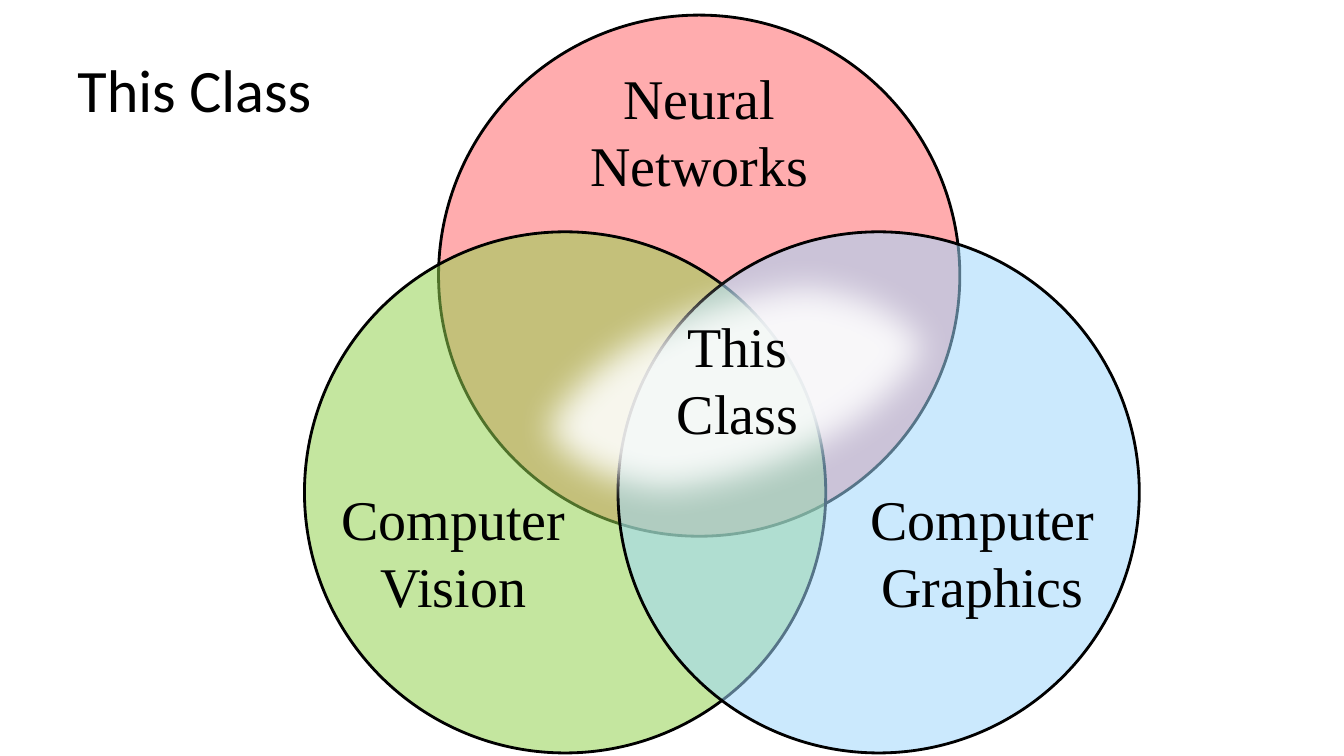
from lxml import etree
from pptx import Presentation
from pptx.dml.color import RGBColor
from pptx.enum.shapes import MSO_SHAPE
from pptx.enum.text import MSO_ANCHOR, PP_ALIGN
from pptx.oxml.ns import qn
from pptx.util import Inches, Pt

OVAL = MSO_SHAPE.OVAL
MIDDLE = MSO_ANCHOR.MIDDLE
CENTER = PP_ALIGN.CENTER
BLACK = RGBColor(0x00, 0x00, 0x00)
WHITE = RGBColor(0xFF, 0xFF, 0xFF)
RED = RGBColor(0xFF, 0x5B, 0x5E)
GREEN = RGBColor(0x93, 0xD1, 0x4F)
BLUE = RGBColor(0xA0, 0xD8, 0xFC)
DIAMETER = 5.17
LABEL_W, LABEL_H = 2.67, 1.45
SOFT_EDGE = Pt(25)


def add_oval(shapes, box, color, opacity):
    """Add a translucent ellipse without shadow in the given box."""
    sp = shapes.add_shape(OVAL, *map(Inches, box))
    sp.shadow.inherit = False
    sp.fill.solid()
    sp.fill.fore_color.rgb = color
    clr = sp.fill._xPr.find(qn("a:solidFill"))[0]
    etree.SubElement(clr, qn("a:alpha")).set("val", str(opacity * 1000))
    return sp


def add_circle(shapes, left, top, color, opacity):
    """Add one outlined circle of the Venn diagram."""
    sp = add_oval(shapes, (left, top, DIAMETER, DIAMETER), color, opacity)
    sp.line.color.rgb = BLACK
    sp.line.width = Pt(2)


def add_run(p, text, font, size):
    """Add a black run to a paragraph."""
    r = p.add_run()
    r.text = text
    r.font.name = font
    r.font.size = Pt(size)
    r.font.color.rgb = BLACK


def add_label(shapes, left, top, first, second):
    """Add a centred label of two lines."""
    tf = shapes.add_textbox(*map(Inches, (left, top, LABEL_W, LABEL_H))).text_frame
    tf.word_wrap = True
    p = tf.paragraphs[0]
    p.alignment = CENTER
    p.line_spacing = Pt(48)
    add_run(p, first, "Times New Roman", 40)
    p.add_line_break()
    add_run(p, second, "Times New Roman", 40)


def add_title(s, box, text):
    """Add the slide title, centred vertically in its box."""
    tf = s.shapes.add_textbox(*map(Inches, box)).text_frame
    tf.word_wrap = True
    tf.vertical_anchor = MIDDLE
    add_run(tf.paragraphs[0], text, "Calibri", 43)


def add_venn(s, left, top):
    """Draw the three overlapping topics, placed from the top left corner."""
    low = top + 2.15
    add_circle(s.shapes, left + 1.33, top, RED, 50)
    add_circle(s.shapes, left, low, GREEN, 54)
    add_circle(s.shapes, left + 3.11, low, BLUE, 54)
    add_label(s.shapes, left + 2.58, top + 0.43, "Neural", "Networks")
    add_label(s.shapes, left + 0.14, low + 2.46, "Computer", "Vision")
    add_label(s.shapes, left + 5.39, low + 2.46, "Computer", "Graphics")


def add_focus(s, left, top):
    """Draw the soft white patch that marks the class, with its label."""
    shapes = s.shapes.add_group_shape().shapes
    sp = add_oval(shapes, (left, top, 4.66, 2.5), WHITE, 87)
    sp.line.fill.background()
    sp.rotation = 345
    effects = sp._element.spPr.find(qn("a:effectLst"))
    etree.SubElement(effects, qn("a:softEdge")).set("rad", str(SOFT_EDGE))
    add_label(shapes, left + 1.02, top + 0.45, "This", "Class")


def main():
    """Build the slide and save it."""
    prs = Presentation()
    prs.slide_width, prs.slide_height = Inches(13.33), Inches(7.5)
    s = prs.slides.add_slide(prs.slide_layouts[6])
    add_title(s, (0.67, 0.25, 12.42, 1.25), "This Class")
    add_venn(s, 3.02, 0.15)
    add_focus(s, 4.96, 2.59)
    prs.save("out.pptx")


if __name__ == "__main__":
    main()
